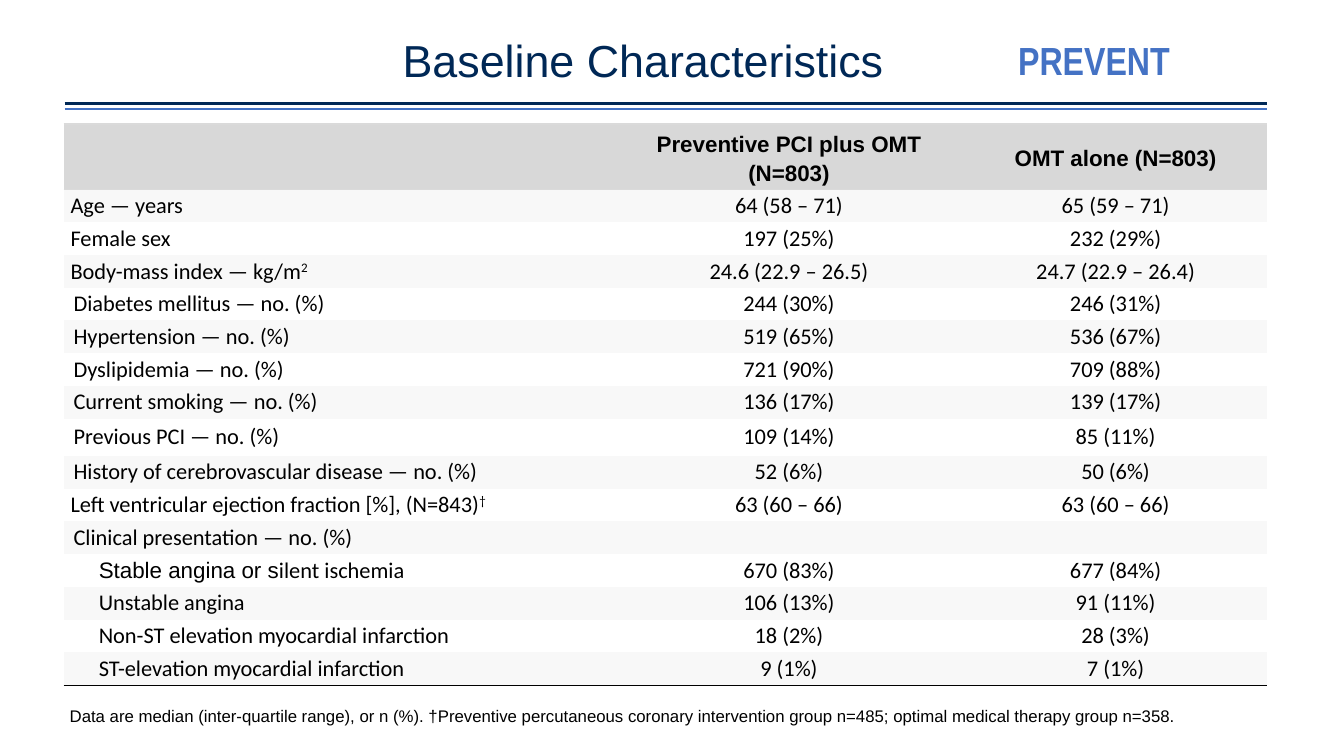
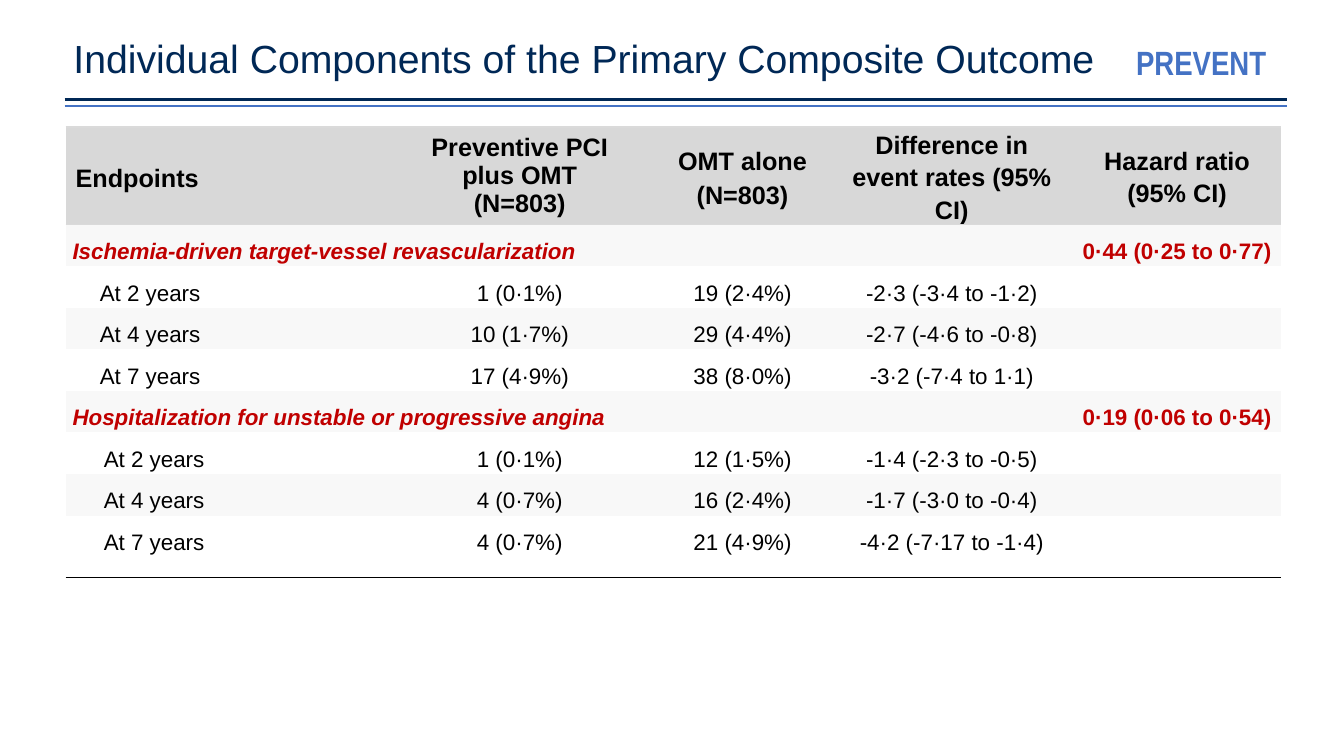
from lxml.etree import SubElement
from pptx import Presentation
from pptx.dml.color import RGBColor
from pptx.enum.shapes import MSO_CONNECTOR as Connector
from pptx.enum.text import MSO_ANCHOR as Anchor, PP_ALIGN as Align
from pptx.oxml.ns import qn
from pptx.util import Inches, Pt

COLORS = {"navy": "002856", "blue": "4472C4", "black": "000000", "red": "C00000",
          "header": "D8D8D8", "band": "F8F8F8", "border": "DADADA"}
NO_TABLE_STYLE = "{2D5ABB26-0587-4C30-8999-92F81FD0307C}"
ARIAL = {"name": "Arial", "size": Pt(16), "bold": False, "color": "black"}
CALIBRI = {**ARIAL, "name": "Calibri"}
HEADER = {**ARIAL, "bold": True}
RED = {**HEADER, "color": "red"}
RED_ITALIC = {**RED, "italic": True}
SUPERSCRIPT = {"baseline": 30000}


class Deck:
    """Holds the shared style and the slide being built."""

    def __init__(self):
        self.presentation = Presentation()
        self.presentation.slide_width = Inches(13.33)
        self.presentation.slide_height = Inches(7.5)
        self.slide = None

    def start_slide(self):
        self.slide = self.presentation.slides.add_slide(self.presentation.slide_layouts[6])

    def paragraphs(self, frame, content, font, align=Align.LEFT, spacing=1.0, indent=0):
        lines = content.split("\n") if isinstance(content, str) else [content]
        for number, line in enumerate(lines):
            paragraph = frame.add_paragraph() if number else frame.paragraphs[0]
            paragraph.alignment = align
            paragraph.line_spacing = spacing
            if indent:
                paragraph._p.get_or_add_pPr().set("indent", str(Inches(indent)))
            for text, changes in [(line, {})] if isinstance(line, str) else line:
                run = paragraph.add_run()
                run.text = text
                self.style_run(run, {**font, **changes})

    def style_run(self, run, style):
        for key, value in style.items():
            if key == "color":
                run.font.color.rgb = RGBColor.from_string(COLORS[value])
            elif key == "baseline":
                run._r.get_or_add_rPr().set("baseline", str(value))
            else:
                setattr(run.font, key, value)

    def text(self, left, top, width, height, content, font, **layout):
        frame = self.slide.shapes.add_textbox(*map(Inches, (left, top, width, height))).text_frame
        frame.word_wrap = True
        self.paragraphs(frame, content, font, **layout)

    def line(self, left, right, top, color, weight):
        connector = self.slide.shapes.add_connector(
            Connector.STRAIGHT, Inches(left), Inches(top), Inches(right), Inches(top))
        connector.line.color.rgb = RGBColor.from_string(COLORS[color])
        connector.line.width = Pt(weight)
        SubElement(connector.element.spPr, qn("a:effectLst"))

    def heading(self, title, size, align, tag_box, tag_size, rule_right, rule_tops):
        self.text(0.63, 0.34, 11.5, 0.79, title,
                  {"name": "Arial", "size": Pt(size), "color": "navy"}, align=align, spacing=0.9)
        self.text(*tag_box, "PREVENT",
                  {"name": "Arial Narrow", "size": Pt(tag_size), "color": "blue", "bold": True})
        for top, color, weight in zip(rule_tops, ("navy", "blue"), (2.25, 1)):
            self.line(0.64, rule_right, top, color, weight)

    def table(self, left, top, widths, heights):
        frame = self.slide.shapes.add_table(
            len(heights), len(widths), Inches(left), Inches(top),
            Inches(sum(widths)), Inches(sum(heights)))
        table = frame.table
        table.first_row = table.horz_banding = False
        next(frame.element.iter(qn("a:tableStyleId"))).text = NO_TABLE_STYLE
        for column, width in zip(table.columns, widths):
            column.width = Inches(width)
        for index, (row, height) in enumerate(zip(table.rows, heights)):
            row.height = Inches(height)
            for cell in row.cells:
                self.cell_margins(cell, 0.07)
                if index == 0:
                    self.border(cell, "lnT", "border")
                    self.border(cell, "lnB", "border")
                self.fill(cell, "header" if index == 0 else "band" if index % 2 else None)
        return table

    def cell_margins(self, cell, inset):
        margins = {"margin_left": Inches(inset), "margin_right": Inches(inset),
                   "margin_top": 0, "margin_bottom": 0, "vertical_anchor": Anchor.MIDDLE}
        for key, value in margins.items():
            setattr(cell, key, value)

    def fill(self, cell, color):
        if color:
            cell.fill.solid()
            cell.fill.fore_color.rgb = RGBColor.from_string(COLORS[color])
        else:
            cell.fill.background()

    def border(self, cell, side, color):
        properties = cell._tc.get_or_add_tcPr()
        edge = SubElement(properties, qn(f"a:{side}"), w=str(Pt(1)))
        SubElement(SubElement(edge, qn("a:solidFill")), qn("a:srgbClr"), val=COLORS[color])
        fills = properties.findall(qn("a:solidFill")) + properties.findall(qn("a:noFill"))
        for fill in fills:
            properties.append(fill)

    def cell(self, cell, content, font, inset=0.07, align=Align.CENTER, **layout):
        if content:
            self.cell_margins(cell, inset)
            self.paragraphs(cell.text_frame, content, font, align=align, **layout)


def baseline_slide(deck):
    rows = [
        ("Age — years", 0.07, 0, "64 (58 – 71)", "65 (59 – 71)"),
        ("Female sex", 0.07, 0, "197 (25%)", "232 (29%)"),
        ([("Body-mass index — kg/m", {}), ("2", SUPERSCRIPT)], 0.07, 0,
         "24.6 (22.9 – 26.5)", "24.7 (22.9 – 26.4)"),
        ("Diabetes mellitus — no. (%)", 0.1, 0, "244 (30%)", "246 (31%)"),
        ("Hypertension — no. (%)", 0.1, 0, "519 (65%)", "536 (67%)"),
        ("Dyslipidemia — no. (%)", 0.1, 0, "721 (90%)", "709 (88%)"),
        ("Current smoking — no. (%)", 0.1, 0, "136 (17%)", "139 (17%)"),
        ("Previous PCI — no. (%)", 0.1, 0, "109 (14%)", "85 (11%)"),
        ("History of cerebrovascular disease — no. (%)", 0.1, 0, "52 (6%)", "50 (6%)"),
        ([("Left ventricular ejection fraction [%], (N=843)", {}), ("†", SUPERSCRIPT)], 0.07, 0,
         "63 (60 – 66)", "63 (60 – 66)"),
        ("Clinical presentation — no. (%)", 0.1, 0, "", ""),
        ([("Stable angina or s", {"name": "Arial"}), ("ilent ischemia", {})], 0.1, 0.25,
         "670 (83%)", "677 (84%)"),
        ("Unstable angina", 0.1, 0.25, "106 (13%)", "91 (11%)"),
        ("Non-ST elevation myocardial infarction", 0.1, 0.25, "18 (2%)", "28 (3%)"),
        ("ST-elevation myocardial infarction", 0.1, 0.25, "9 (1%)", "7 (1%)"),
    ]
    deck.start_slide()
    deck.text(0.44, 6.95, 11.48, 0.3,
              "Data are median (inter-quartile range), or n (%). †Preventive percutaneous coronary "
              "intervention group n=485; optimal medical therapy group n=358.",
              {**ARIAL, "size": Pt(12)}, align=Align.CENTER)
    row_height = 4.55 / 14
    heights = [0.65] + [row_height] * 7 + [0.37] + [row_height] * 7
    table = deck.table(0.63, 1.23, [5.46, 3.47, 3.01], heights)
    for column, title in enumerate(("Preventive PCI plus OMT (N=803)", "OMT alone (N=803)"), 1):
        deck.cell(table.cell(0, column), title, HEADER, inset=0.1, spacing=1.2)
    for index, (label, inset, indent, *values) in enumerate(rows, 1):
        deck.cell(table.cell(index, 0), label, CALIBRI, inset, Align.LEFT, indent=indent)
        for column, value in enumerate(values, 1):
            deck.cell(table.cell(index, column), value, CALIBRI)
    for column in range(3):
        deck.border(table.cell(len(rows), column), "lnB", "black")
    deck.heading("Baseline Characteristics", 32, Align.CENTER,
                 (10, 0.31, 2.57, 0.57), 28, 12.57, (1.03, 1.08))


def components_slide(deck):
    headers = [
        ("Endpoints", 0.1, Align.LEFT, 1.2),
        ("Preventive PCI\nplus OMT\n(N=803)", 0.1, Align.CENTER, 1.0),
        ("OMT alone\n(N=803)", 0.1, Align.CENTER, 1.2),
        ("Difference in\nevent rates (95% CI)", 0.07, Align.CENTER, 1.15),
        ("Hazard ratio\n(95% CI)", 0.07, Align.CENTER, 1.15),
    ]
    endpoints = [
        ("Ischemia-driven target-vessel revascularization", "0·44 (0·25 to 0·77)", 2, 0.27, [
            ("At 2 years", "1 (0·1%)", "19 (2·4%)", "-2·3 (-3·4 to -1·2)"),
            ("At 4 years", "10 (1·7%)", "29 (4·4%)", "-2·7 (-4·6 to -0·8)"),
            ("At 7 years", "17 (4·9%)", "38 (8·0%)", "-3·2 (-7·4 to 1·1)")]),
        ("Hospitalization for unstable or progressive angina", "0·19 (0·06 to 0·54)", 1, 0.31, [
            ("At 2 years", "1 (0·1%)", "12 (1·5%)", "-1·4 (-2·3 to -0·5)"),
            ("At 4 years", "4 (0·7%)", "16 (2·4%)", "-1·7 (-3·0 to -0·4)"),
            ("At 7 years", "4 (0·7%)", "21 (4·9%)", "-4·2 (-7·17 to -1·4)")]),
    ]
    deck.start_slide()
    table = deck.table(0.65, 1.26, [3.17, 2.67, 1.75, 2.4, 2.07], [0.97] + [3.3 / 8] * 8)
    for column, (title, inset, align, spacing) in enumerate(headers):
        deck.cell(table.cell(0, column), title, {**HEADER, "size": Pt(18)},
                  inset, align, spacing=spacing)
    row = 1
    for endpoint, ratio, last_column, indent, years in endpoints:
        table.cell(row, 0).merge(table.cell(row, last_column))
        deck.cell(table.cell(row, 0), endpoint, RED_ITALIC, align=Align.LEFT, spacing=1.5)
        deck.cell(table.cell(row, 4), ratio, RED, spacing=1.5)
        for row, (year, *values) in enumerate(years, row + 1):
            deck.cell(table.cell(row, 0), year, ARIAL, align=Align.LEFT, spacing=1.5, indent=indent)
            for column, value in enumerate(values, 1):
                deck.cell(table.cell(row, column), value, ARIAL, spacing=1.5)
        row += 1
    deck.line(0.65, 12.71, 5.73, "black", 0.75)
    deck.heading("Individual Components of the Primary Composite Outcome", 28, Align.LEFT,
                 (11.17, 0.37, 1.84, 0.5), 24, 12.76, (0.99, 1.05))


def main():
    deck = Deck()
    baseline_slide(deck)
    components_slide(deck)
    deck.presentation.save("out.pptx")


if __name__ == "__main__":
    main()
